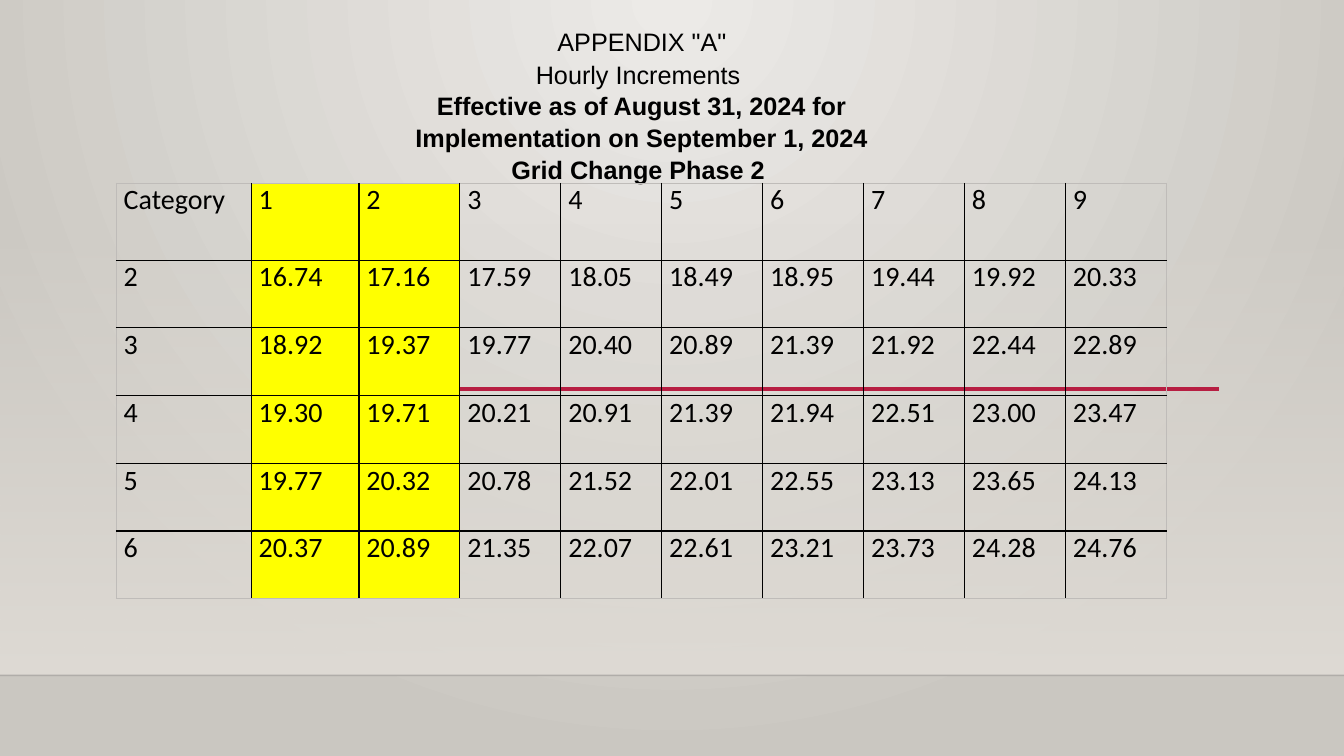
from dataclasses import dataclass

from lxml import etree
from pptx import Presentation
from pptx import util as u
from pptx.dml.color import RGBColor
from pptx.enum import shapes, text
from pptx.oxml import parse_xml
from pptx.oxml.ns import nsdecls, qn


@dataclass(frozen=True)
class Theme:
    ink: str = "000000"
    highlight: str = "FFFF00"
    accent: str = "B71E42"
    floor_line: str = "000001"
    outer_border: str = "BFBCB9"
    glow: str = "ECEAE7"
    wall: str = "CAC7C1"
    haze: str = "DFDBD5"
    title_font: str = "Arial"
    table_font: str = "Calibri"
    title_size: float = 18
    table_size: float = 20


@dataclass(frozen=True)
class Rule:
    left: float
    right: float
    y: float
    color: str
    width: float
    opacity: int = 100


@dataclass(frozen=True)
class TitleLine:
    words: str
    bold: bool = False
    lead: str = ""  # leading span, set at the table size


THEME = Theme()
WIDTH, HEIGHT = 960, 540
FLOOR_Y = 482.4

RULES = [
    Rule(0, WIDTH, FLOOR_Y, THEME.floor_line, 1, 20),
    Rule(190, 870.5, 277.9, THEME.accent, 2.5),
]
TITLE = [
    TitleLine('APPENDIX "A" ', lead=" "),
    TitleLine("Hourly Increments "),
    TitleLine(" Effective as of August 31, 2024 for ", bold=True),
    TitleLine("Implementation on September 1, 2024", bold=True),
    TitleLine("Grid Change Phase 2 ", bold=True),
]
HEADER = ["Category", *(str(step) for step in range(1, 10))]
RATES = {
    "2": "16.74 17.16 17.59 18.05 18.49 18.95 19.44 19.92 20.33",
    "3": "18.92 19.37 19.77 20.40 20.89 21.39 21.92 22.44 22.89",
    "4": "19.30 19.71 20.21 20.91 21.39 21.94 22.51 23.00 23.47",
    "5": "19.77 20.32 20.78 21.52 22.01 22.55 23.13 23.65 24.13",
    "6": "20.37 20.89 21.35 22.07 22.61 23.21 23.73 24.28 24.76",
}
COLUMN_WIDTHS = [96.5, 77] + [72.1] * 8
ROW_HEIGHTS = [55] + [48.4] * 5
HIGHLIGHTED_COLUMNS = (1, 2)


def gradient(stops: list[tuple[str, int]], direction: str) -> str:
    """Gradient fill of two stops, each a colour and an opacity in percent."""
    marks = "".join(
        f'<a:gs pos="{i * 100000}"><a:srgbClr val="{color}">'
        f'<a:alpha val="{opacity * 1000}"/></a:srgbClr></a:gs>'
        for i, (color, opacity) in enumerate(stops))
    return (f'<a:gradFill {nsdecls("a")} rotWithShape="1">'
            f'<a:gsLst>{marks}</a:gsLst>{direction}</a:gradFill>')


def draw_backdrop(page) -> None:
    # Radial glow from the top centre
    glow = gradient(
        [(THEME.glow, 100), (THEME.wall, 100)],
        '<a:path path="circle"><a:fillToRect l="43000" r="43000" b="100000"/></a:path>')
    page.element.cSld.insert(0, parse_xml(
        f'<p:bg {nsdecls("p", "a")}><p:bgPr>{glow}<a:effectLst/></p:bgPr></p:bg>'))

    # Haze that thickens towards the floor
    haze = page.shapes.add_shape(
        shapes.MSO_SHAPE.RECTANGLE, 0, u.Pt(159.1), u.Pt(WIDTH), u.Pt(FLOOR_Y - 159.1))
    haze.shadow.inherit = False
    haze.line.fill.background()
    haze.element.spPr.find(qn("a:prstGeom")).addnext(parse_xml(gradient(
        [(THEME.haze, 0), (THEME.haze, 100)], '<a:lin ang="5400000" scaled="0"/>')))


def draw_rule(page, rule: Rule) -> None:
    line = page.shapes.add_connector(
        shapes.MSO_CONNECTOR.STRAIGHT,
        u.Pt(rule.left), u.Pt(rule.y), u.Pt(rule.right), u.Pt(rule.y))
    line.line.color.rgb = RGBColor.from_string(rule.color)
    line.line.width = u.Pt(rule.width)
    properties = line.element.spPr
    if rule.opacity < 100:
        color = next(properties.iter(qn("a:srgbClr")))
        etree.SubElement(color, qn("a:alpha"), val=str(rule.opacity * 1000))
    etree.SubElement(properties, qn("a:effectLst"))


def style_font(font, name: str, size: float, bold: bool = False) -> None:
    font.name, font.size, font.bold = name, u.Pt(size), bold
    font.color.rgb = RGBColor.from_string(THEME.ink)


def draw_title(page, lines: list[TitleLine]) -> None:
    box = page.shapes.add_textbox(u.Pt(11.5), u.Pt(12.2), u.Pt(893.5), u.Pt(118.8))
    frame = box.text_frame
    frame.word_wrap = True
    for i, line in enumerate(lines):
        para = frame.add_paragraph() if i else frame.paragraphs[0]
        para.alignment = text.PP_ALIGN.CENTER
        para.line_spacing = 1.05
        style_font(para.font, THEME.title_font, THEME.title_size, line.bold)
        if line.lead:
            span = para.add_run()
            span.text = line.lead
            span.font.size = u.Pt(THEME.table_size)
        para.add_run().text = line.words


def set_borders(cell, outer: dict[str, bool]) -> None:
    """Faint lines round the table, black lines inside it."""
    properties = cell._tc.get_or_add_tcPr()
    for i, (side, is_outer) in enumerate(outer.items()):
        color, width = (THEME.outer_border, 0.5) if is_outer else (THEME.ink, 1)
        properties.insert(i, parse_xml(
            f'<a:{side} {nsdecls("a")} w="{u.Pt(width)}"><a:solidFill>'
            f'<a:srgbClr val="{color}"/></a:solidFill></a:{side}>'))


def draw_table(page, rows: list[list[str]]) -> None:
    frame = page.shapes.add_table(
        len(rows), len(HEADER), u.Pt(82.9), u.Pt(130.8),
        u.Pt(sum(COLUMN_WIDTHS)), u.Pt(sum(ROW_HEIGHTS)))
    table = frame.table
    table.first_row = table.horz_banding = False
    for column, width in zip(table.columns, COLUMN_WIDTHS):
        column.width = u.Pt(width)
    for row, height in zip(table.rows, ROW_HEIGHTS):
        row.height = u.Pt(height)
    for r, values in enumerate(rows):
        for c, value in enumerate(values):
            cell = table.cell(r, c)
            cell.text = value
            cell.margin_left = cell.margin_right = u.Pt(5.4)
            cell.margin_top = cell.margin_bottom = 0
            style_font(cell.text_frame.paragraphs[0].font,
                       THEME.table_font, THEME.table_size)
            if c in HIGHLIGHTED_COLUMNS:
                cell.fill.solid()
                cell.fill.fore_color.rgb = RGBColor.from_string(THEME.highlight)
            else:
                cell.fill.background()
            set_borders(cell, {"lnL": c == 0, "lnR": c == len(values) - 1,
                               "lnT": r == 0, "lnB": r == len(rows) - 1})


def main() -> None:
    deck = Presentation()
    deck.slide_width, deck.slide_height = u.Pt(WIDTH), u.Pt(HEIGHT)
    page = deck.slides.add_slide(deck.slide_layouts[6])
    draw_backdrop(page)
    for rule in RULES:
        draw_rule(page, rule)
    draw_title(page, TITLE)
    draw_table(page, [HEADER] + [[name, *rates.split()] for name, rates in RATES.items()])
    deck.save("out.pptx")


if __name__ == "__main__":
    main()
